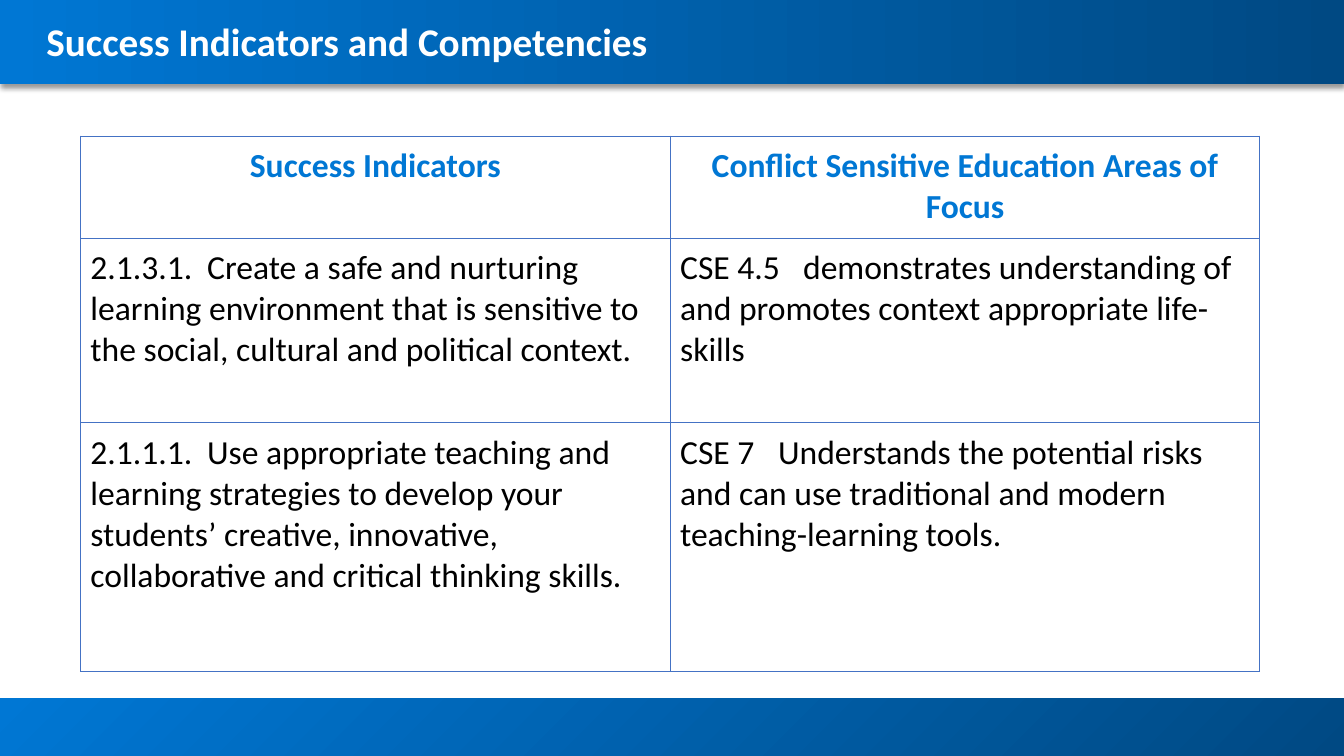
from lxml import etree
from pptx import Presentation
from pptx.dml.color import RGBColor
from pptx.enum.shapes import MSO_SHAPE as SHAPE
from pptx.enum.text import MSO_ANCHOR as ANCHOR, PP_ALIGN as ALIGN
from pptx.oxml import parse_xml
from pptx.oxml.ns import nsdecls, qn
from pptx.util import Cm, Pt

WHITE = RGBColor(0xFF, 0xFF, 0xFF)
BLACK = RGBColor(0, 0, 0)
BRIGHT = RGBColor(0x00, 0x77, 0xD4)
DARK = RGBColor(0x00, 0x49, 0x83)
BORDER = RGBColor(0x44, 0x72, 0xC4)
WIDTH, HEIGHT = Cm(33.87), Cm(19.05)
MARGINS = ("margin_left", "margin_top", "margin_right", "margin_bottom")

HEADERS = ("Success Indicators", "Conflict Sensitive Education Areas of Focus")
ROWS = (
    (("2.1.3.1.", 2.94, "Create a safe and nurturing learning environment that is "
      "sensitive to the social, cultural and political context."),
     ("CSE 4.5", 3.1, "demonstrates understanding of and promotes context "
      "appropriate life-skills")),
    (("2.1.1.1.", 2.94, "Use appropriate teaching and learning strategies to develop "
      "your students’ creative, innovative, collaborative and critical "
      "thinking skills."),
     ("CSE 7", 2.47, "Understands the potential risks and can use traditional and "
      "modern teaching-learning tools.")),
)
ROW_HEIGHTS = (2.57, 4.64, 6.27)


def set_attrs(obj, values):
    for name, value in values.items():
        setattr(obj, name, value)


def write(p, text, size, color, bold):
    r = p.add_run()
    r.text = text
    set_attrs(r.font, {"name": "Calibri", "size": Pt(size), "bold": bold})
    r.font.color.rgb = color


def add_bar(slide, top, height, colors, angle):
    sp = slide.shapes.add_shape(SHAPE.RECTANGLE, 0, top, WIDTH, height)
    sp.shadow.inherit = False
    sp.line.fill.background()
    sp.fill.gradient()
    sp.fill.gradient_angle = angle
    for stop, color in zip(sp.fill.gradient_stops, colors):
        stop.color.rgb = color
    return sp


def add_shadow(sp):
    effects = sp._element.spPr.find(qn("a:effectLst"))
    effects.append(parse_xml(
        f'<a:outerShdw {nsdecls("a")} blurRad="{Pt(4)}" dist="{Pt(3)}" dir="5400000" '
        'algn="t" rotWithShape="0"><a:srgbClr val="000000"><a:alpha val="40000"/>'
        '</a:srgbClr></a:outerShdw>'))


def format_title(slide, text):
    title = slide.shapes.title
    slide.shapes._spTree.append(title._element)
    set_attrs(title, {"left": Cm(1.17), "top": Cm(0.43),
                      "width": Cm(31.52), "height": Cm(1.27)})
    tf = title.text_frame
    set_attrs(tf, dict.fromkeys(MARGINS, 0))
    set_attrs(tf, {"vertical_anchor": ANCHOR.MIDDLE, "word_wrap": True})
    p = tf.paragraphs[0]
    set_attrs(p, {"alignment": ALIGN.LEFT, "line_spacing": 0.99})
    write(p, text, 28, WHITE, True)


def add_tab_stop(p, position):
    tabs = etree.SubElement(p._p.get_or_add_pPr(), qn("a:tabLst"))
    etree.SubElement(tabs, qn("a:tab"), pos=str(Cm(position)), algn="l")


def format_cell(cell):
    set_attrs(cell, dict.fromkeys(MARGINS, Cm(0.25)))
    cell.vertical_anchor = ANCHOR.TOP
    cell.fill.background()
    tc_pr = cell._tc.get_or_add_tcPr()
    for i, side in enumerate("LRTB"):
        tc_pr.insert(i, parse_xml(
            f'<a:ln{side} {nsdecls("a")} w="{Pt(0.75)}"><a:solidFill>'
            f'<a:srgbClr val="{BORDER}"/></a:solidFill></a:ln{side}>'))


def add_competency_table(slide):
    frame = slide.shapes.add_table(len(ROW_HEIGHTS), len(HEADERS), Cm(2.03), Cm(3.43),
                                   Cm(29.72), Cm(sum(ROW_HEIGHTS)))
    table = frame.table
    set_attrs(table, {"first_row": False, "horz_banding": False})
    for row, height in zip(table.rows, ROW_HEIGHTS):
        row.height = Cm(height)
    for cell in table.iter_cells():
        format_cell(cell)
    for col, text in enumerate(HEADERS):
        p = table.cell(0, col).text_frame.paragraphs[0]
        p.alignment = ALIGN.CENTER
        write(p, text, 24, BRIGHT, True)
    for row, entries in enumerate(ROWS, 1):
        for col, (code, tab, text) in enumerate(entries):
            p = table.cell(row, col).text_frame.paragraphs[0]
            add_tab_stop(p, tab)
            write(p, f"{code}\t{text}", 24, BLACK, False)


def main():
    prs = Presentation()
    set_attrs(prs, {"slide_width": WIDTH, "slide_height": HEIGHT})
    slide = prs.slides.add_slide(prs.slide_layouts[5])
    footer_height = Cm(1.45)
    add_bar(slide, HEIGHT - footer_height, footer_height, (DARK, BRIGHT), 135)
    add_shadow(add_bar(slide, 0, Cm(2.12), (BRIGHT, DARK), 0))
    format_title(slide, "Success Indicators and Competencies")
    add_competency_table(slide)
    prs.save("out.pptx")


if __name__ == "__main__":
    main()
